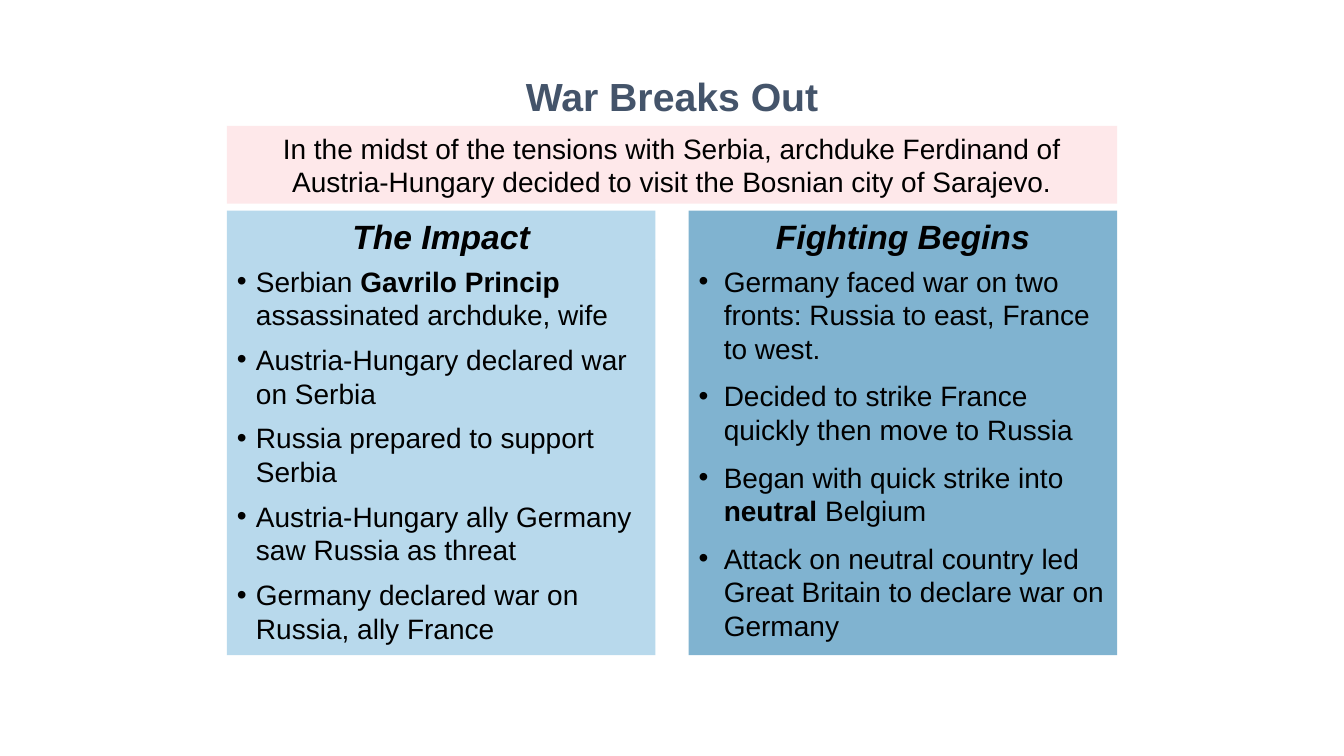
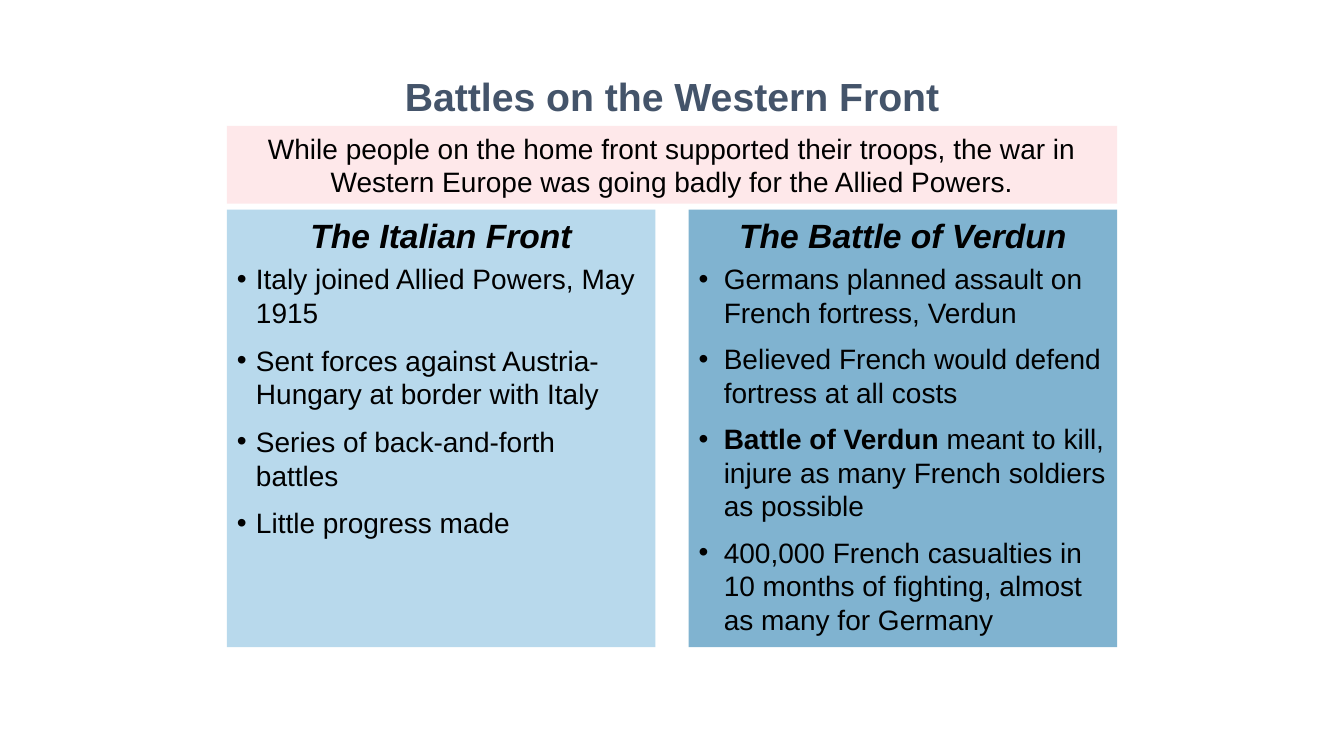
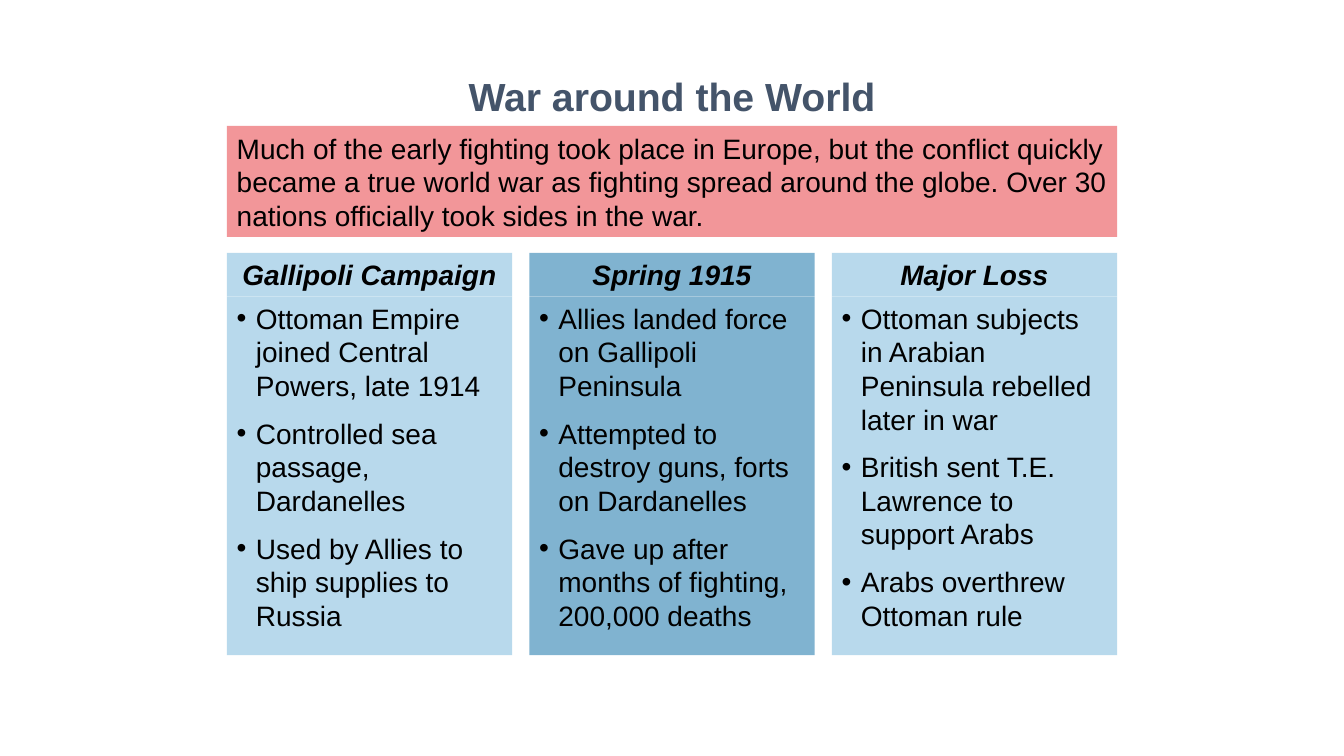
from dataclasses import dataclass

from lxml import etree
from pptx import Presentation
from pptx.dml.color import RGBColor
from pptx.enum.shapes import MSO_SHAPE
from pptx.enum.text import MSO_ANCHOR, PP_ALIGN
from pptx.oxml.ns import qn
from pptx.util import Inches, Pt

RECT = MSO_SHAPE.RECTANGLE
TOP, MIDDLE = MSO_ANCHOR.TOP, MSO_ANCHOR.MIDDLE
LEFT, CENTER = PP_ALIGN.LEFT, PP_ALIGN.CENTER


@dataclass(frozen=True)
class Theme:
    font: str = "Arial"
    title: str = "44546A"
    text: str = "000000"
    rose: str = "FEE8EA"
    red: str = "F29699"
    light: str = "B8D9EC"
    deep: str = "80B3D0"
    title_size: int = 28
    heading_size: int = 24
    body_size: int = 20


T = Theme()

# Page frame, in inches
PAGE_W, PAGE_H = 13.33, 7.5
FRAME_X, FRAME_W = 2.25, 8.83
TITLE_Y, TITLE_H = 0.67, 0.58
BANNER_Y = TITLE_Y + TITLE_H

# Content: words between asterisks are bold.
# Column: heading, bullet indent (in), space after (share of type size), bullets
SLIDES = [
    dict(
        title="War Breaks Out",
        banner="In the midst of the tensions with Serbia, archduke Ferdinand of "
               "Austria-Hungary decided to visit the Bosnian city of Sarajevo.",
        banner_fill=T.rose, banner_align=CENTER, banner_h=0.77,
        top=2.09, heading_h=0.48, bottom=6.5, gap=0.33, heading_size=T.heading_size,
        columns=[
            ("The Impact", 0.19, 0.4, [
                "Serbian *Gavrilo Princip* assassinated archduke, wife",
                "Austria-Hungary declared war on Serbia",
                "Russia prepared to support Serbia",
                "Austria-Hungary ally Germany saw Russia as threat",
                "Germany declared war on Russia, ally France",
            ]),
            ("Fighting Begins", 0.25, 0.5, [
                "Germany faced war on two fronts: Russia to east, France to west.",
                "Decided to strike France quickly then move to Russia",
                "Began with quick strike into *neutral* Belgium",
                "Attack on neutral country led Great Britain to declare war on Germany",
            ]),
        ],
    ),
    dict(
        title="Battles on the Western Front",
        banner="While people on the home front supported their troops, the war in "
               "Western Europe was going badly for the Allied Powers.",
        banner_fill=T.rose, banner_align=CENTER, banner_h=0.77,
        top=2.08, heading_h=0.47, bottom=6.42, gap=0.33, heading_size=T.heading_size,
        columns=[
            ("The Italian Front", 0.19, 0.5, [
                "Italy joined Allied Powers, May 1915",
                "Sent forces against Austria-Hungary at border with Italy",
                "Series of back-and-forth battles",
                "Little progress made",
            ]),
            ("The Battle of Verdun", 0.25, 0.45, [
                "Germans planned assault on French fortress, Verdun",
                "Believed French would defend fortress at all costs",
                "*Battle of Verdun* meant to kill, injure as many French soldiers as possible",
                "400,000 French casualties in 10 months of fighting, almost as many for Germany",
            ]),
        ],
    ),
    dict(
        title="War around the World",
        banner="Much of the early fighting took place in Europe, but the conflict quickly "
               "became a true world war as fighting spread around the globe. Over 30 "
               "nations officially took sides in the war.",
        banner_fill=T.red, banner_align=LEFT, banner_h=1.1,
        top=2.51, heading_h=0.43, bottom=6.5, gap=0.17, heading_size=T.body_size,
        columns=[
            ("Gallipoli Campaign", 0.19, 0.5, [
                "Ottoman Empire joined Central Powers, late 1914",
                "Controlled sea passage, Dardanelles",
                "Used by Allies to ship supplies to Russia",
            ]),
            ("Spring 1915", 0.19, 0.5, [
                "Allies landed force on Gallipoli Peninsula",
                "Attempted to destroy guns, forts on Dardanelles",
                "Gave up after months of fighting, 200,000 deaths",
            ]),
            ("Major Loss", 0.19, 0.5, [
                "Ottoman subjects in Arabian Peninsula rebelled later in war",
                "British sent T.E. Lawrence to support Arabs",
                "Arabs overthrew Ottoman rule",
            ]),
        ],
    ),
]


def add_panel(s, box, fill):
    """Borderless filled rectangle."""
    sp = s.shapes.add_shape(RECT, *map(Inches, box))
    sp.shadow.inherit = False
    sp.fill.solid()
    sp.fill.fore_color.rgb = RGBColor.from_string(fill)
    sp.line.fill.background()
    return sp


def write(sp, paragraphs, size=T.body_size, color=T.text, align=LEFT,
          anchor=TOP, bold=False, italic=False, after=0, indent=0):
    """Fill a shape with paragraphs; an indent makes them bulleted."""
    tf = sp.text_frame
    tf.word_wrap = True
    tf.vertical_anchor = anchor
    for i, text in enumerate(paragraphs):
        p = tf.add_paragraph() if i else tf.paragraphs[0]
        p.alignment = align
        p.space_after = Pt(after * size)
        font = p.font
        font.name, font.size, font.italic = T.font, Pt(size), italic
        font.bold = bold
        font.color.rgb = RGBColor.from_string(color)
        for k, part in enumerate(text.split("*")):
            if part:
                r = p.add_run()
                r.text = part
                if k % 2:
                    r.font.bold = True
        if indent:
            add_bullet(p, indent)


def add_bullet(p, indent):
    """Hanging bullet in the text font."""
    pPr = p._p.get_or_add_pPr()
    pPr.set("marL", str(Inches(indent)))
    pPr.set("indent", str(-Inches(indent)))
    defaults = pPr.find(qn("a:defRPr"))
    defaults.addprevious(etree.Element(qn("a:buFont"), typeface=T.font))
    defaults.addprevious(etree.Element(qn("a:buChar"), char="•"))


def add_columns(s, data):
    """Equal columns, each a heading on top of its bullet list."""
    n = len(data["columns"])
    gap, top, head_h = data["gap"], data["top"], data["heading_h"]
    width = (FRAME_W - gap * (n - 1)) / n
    body_y = top + head_h
    for i, (heading, indent, after, bullets) in enumerate(data["columns"]):
        x = FRAME_X + i * (width + gap)
        fill = T.deep if i % 2 else T.light
        body = add_panel(s, (x, body_y, width, data["bottom"] - body_y), fill)
        write(body, bullets, after=after, indent=indent)
        head = add_panel(s, (x, top, width, head_h), fill)
        write(head, [heading], size=data["heading_size"], align=CENTER,
              bold=True, italic=True)


def build_slide(prs, data):
    s = prs.slides.add_slide(prs.slide_layouts[6])
    # Banner
    banner = add_panel(s, (FRAME_X, BANNER_Y, FRAME_W, data["banner_h"]), data["banner_fill"])
    write(banner, [data["banner"]], align=data["banner_align"], anchor=MIDDLE)
    # Columns
    add_columns(s, data)
    # Title
    title = s.shapes.add_textbox(*map(Inches, (FRAME_X, TITLE_Y, FRAME_W, TITLE_H)))
    write(title, [data["title"]], size=T.title_size, color=T.title,
          align=CENTER, bold=True)


def main():
    prs = Presentation()
    prs.slide_width, prs.slide_height = Inches(PAGE_W), Inches(PAGE_H)
    for data in SLIDES:
        build_slide(prs, data)
    prs.save("out.pptx")


if __name__ == "__main__":
    main()
